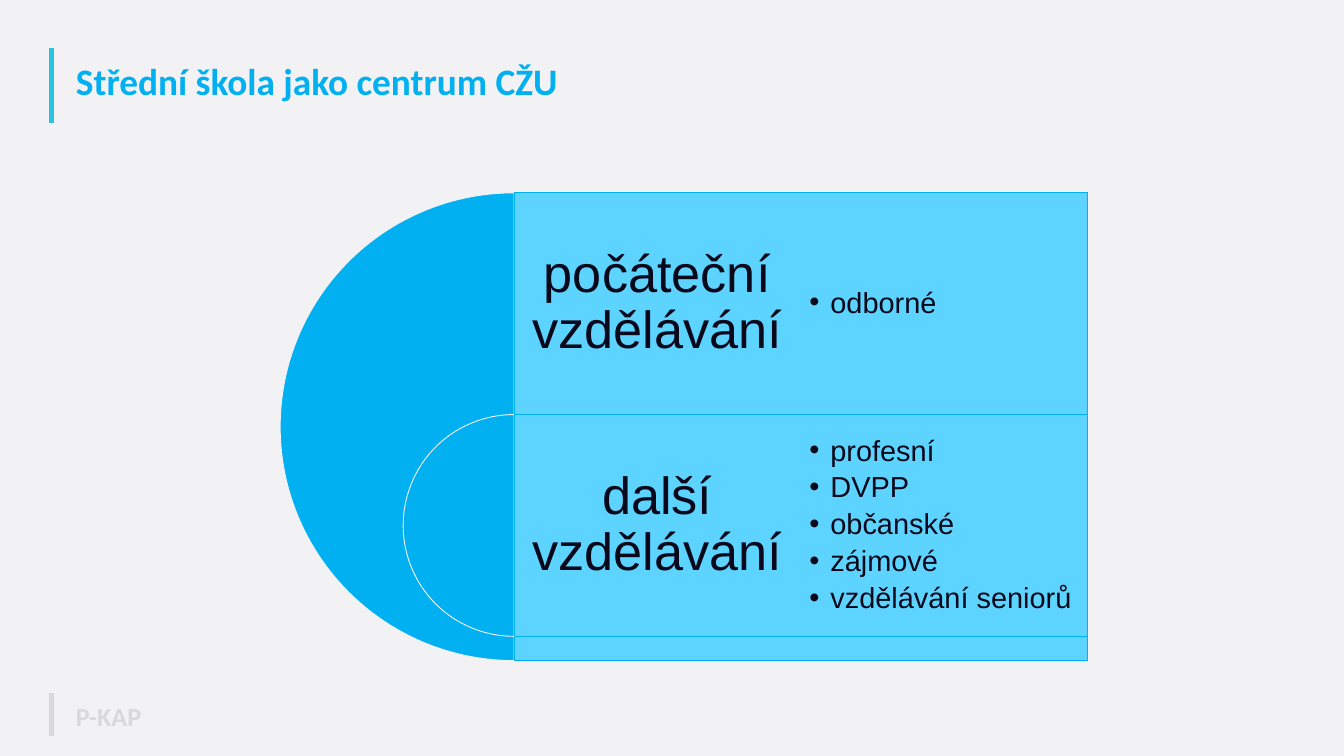
import pptx
import pptx.dml.color
import pptx.enum.shapes
import pptx.enum.text
import pptx.oxml
import pptx.util
from lxml import etree

Pt = pptx.util.Pt
SHAPE = pptx.enum.shapes.MSO_SHAPE
ALIGN = pptx.enum.text.PP_ALIGN
ANCHOR = pptx.enum.text.MSO_ANCHOR

COLORS = {
    "background": "F2F2F5",
    "accent": "2BC3E1",
    "muted": "D9D9D9",
    "blue": "00B0F0",
    "band": "5DD4FF",
    "ink": "0A091B",
}
AXIS, TOP, BAND_WIDTH = 550.8, 206.6, 614
DIAMETER, ROW_HEIGHT = 501.2, 237.6
STAGES = [
    ("počáteční vzdělávání", ["odborné"], DIAMETER),
    ("další vzdělávání",
     ["profesní", "DVPP", "občanské", "zájmové", "vzdělávání seniorů"],
     ROW_HEIGHT),
]
TITLE_FONT = {"name": "Calibri", "size": Pt(40), "bold": True}
FOOTER_FONT = {"name": "Calibri", "size": Pt(28), "bold": True}
LABEL_FONT = {"name": "Arial", "size": Pt(56)}
LIST_FONT = {"name": "Arial", "size": Pt(31)}


def rgb(color):
    """Return the named colour as an RGBColor."""
    return pptx.dml.color.RGBColor.from_string(COLORS[color])


def set_format(target, values):
    """Set every attribute in values on target."""
    for name, value in values.items():
        setattr(target, name, value)


def place(part, left, top, width, height):
    """Move and size a part, in points."""
    set_format(part, {"left": Pt(left), "top": Pt(top),
                      "width": Pt(width), "height": Pt(height)})


def write(part, lines, font, color, align=ALIGN.LEFT, inset=7.2, gap=0):
    """Write formatted paragraphs into a text box or placeholder."""
    frame = part.text_frame
    frame.text = "\n".join(lines)
    set_format(frame, {
        "word_wrap": True,
        "auto_size": pptx.enum.text.MSO_AUTO_SIZE.NONE,
        "vertical_anchor": ANCHOR.MIDDLE,
        "margin_left": Pt(inset), "margin_right": Pt(inset),
        "margin_top": Pt(inset), "margin_bottom": Pt(inset),
    })
    for paragraph in frame.paragraphs:
        set_format(paragraph, {"alignment": align, "line_spacing": 0.9,
                               "space_before": Pt(0), "space_after": Pt(gap)})
        set_format(paragraph.runs[0].font, font)
        paragraph.runs[0].font.color.rgb = rgb(color)


def add_text(slide, text, box, font, color, **layout):
    """Add a text box holding one paragraph."""
    label = slide.shapes.add_textbox(*map(Pt, box))
    write(label, [text], font, color, **layout)


def add_marker(slide, top, bottom, color):
    """Add a thick vertical line at the left margin."""
    marker = slide.shapes.add_connector(
        pptx.enum.shapes.MSO_CONNECTOR.STRAIGHT,
        Pt(55.4), Pt(top), Pt(55.4), Pt(bottom))
    marker.line.width = Pt(5)
    marker.line.color.rgb = rgb(color)
    etree.SubElement(marker._element.spPr, pptx.oxml.ns.qn("a:effectLst"))


def add_figure(slide, kind, box, fill, outline):
    """Add a filled and outlined preset shape."""
    figure = slide.shapes.add_shape(kind, *map(Pt, box))
    figure.shadow.inherit = False
    figure.fill.solid()
    figure.fill.fore_color.rgb = rgb(fill)
    figure.line.color.rgb = rgb(outline)
    figure.line.width = Pt(1)
    return figure


def add_stage(slide, row, label, diameter):
    """Add the half circle, band and label of one stage."""
    top = TOP + row * ROW_HEIGHT
    half = add_figure(slide, SHAPE.PIE,
                      (AXIS - diameter / 2, top, diameter, diameter),
                      "blue", "background")
    half.adjustments[0], half.adjustments[1] = 54, 162
    add_figure(slide, SHAPE.RECTANGLE, (AXIS, top, BAND_WIDTH, diameter),
               "band", "blue")
    add_text(slide, label, (AXIS, top, BAND_WIDTH / 2, ROW_HEIGHT),
             LABEL_FONT, "ink", align=ALIGN.CENTER, inset=16.6)


def fill_list(slide, row, items):
    """Fill the body placeholder of a stage and bring it to the front."""
    body = slide.placeholders[row + 1]
    place(body, AXIS + BAND_WIDTH / 2, TOP + row * ROW_HEIGHT,
          BAND_WIDTH / 2, ROW_HEIGHT)
    write(body, items, LIST_FONT, "ink", inset=9.4, gap=6)
    for paragraph in body.text_frame.paragraphs:
        properties = paragraph._p.get_or_add_pPr()
        properties.set("marL", str(Pt(22.5)))
        properties.set("indent", str(-Pt(22.5)))
    slide.shapes._spTree.append(body._element)


def main():
    """Build the slide and save it."""
    deck = pptx.Presentation()
    set_format(deck, {"slide_width": Pt(1440), "slide_height": Pt(810)})
    slide = deck.slides.add_slide(deck.slide_layouts[3])
    slide.background.fill.solid()
    slide.background.fill.fore_color.rgb = rgb("background")

    add_marker(slide, 51.4, 131.8, "accent")
    add_marker(slide, 742.5, 789, "muted")
    place(slide.shapes.title, 74.2, 63.4, 1299.6, 51)
    write(slide.shapes.title, ["Střední škola jako centrum CŽU"],
          TITLE_FONT, "blue")
    add_text(slide, "P-KAP", (74.2, 746, 400, 46), FOOTER_FONT, "muted")

    for row, (label, items, diameter) in enumerate(STAGES):
        add_stage(slide, row, label, diameter)
        fill_list(slide, row, items)
    deck.save("out.pptx")


if __name__ == "__main__":
    main()
